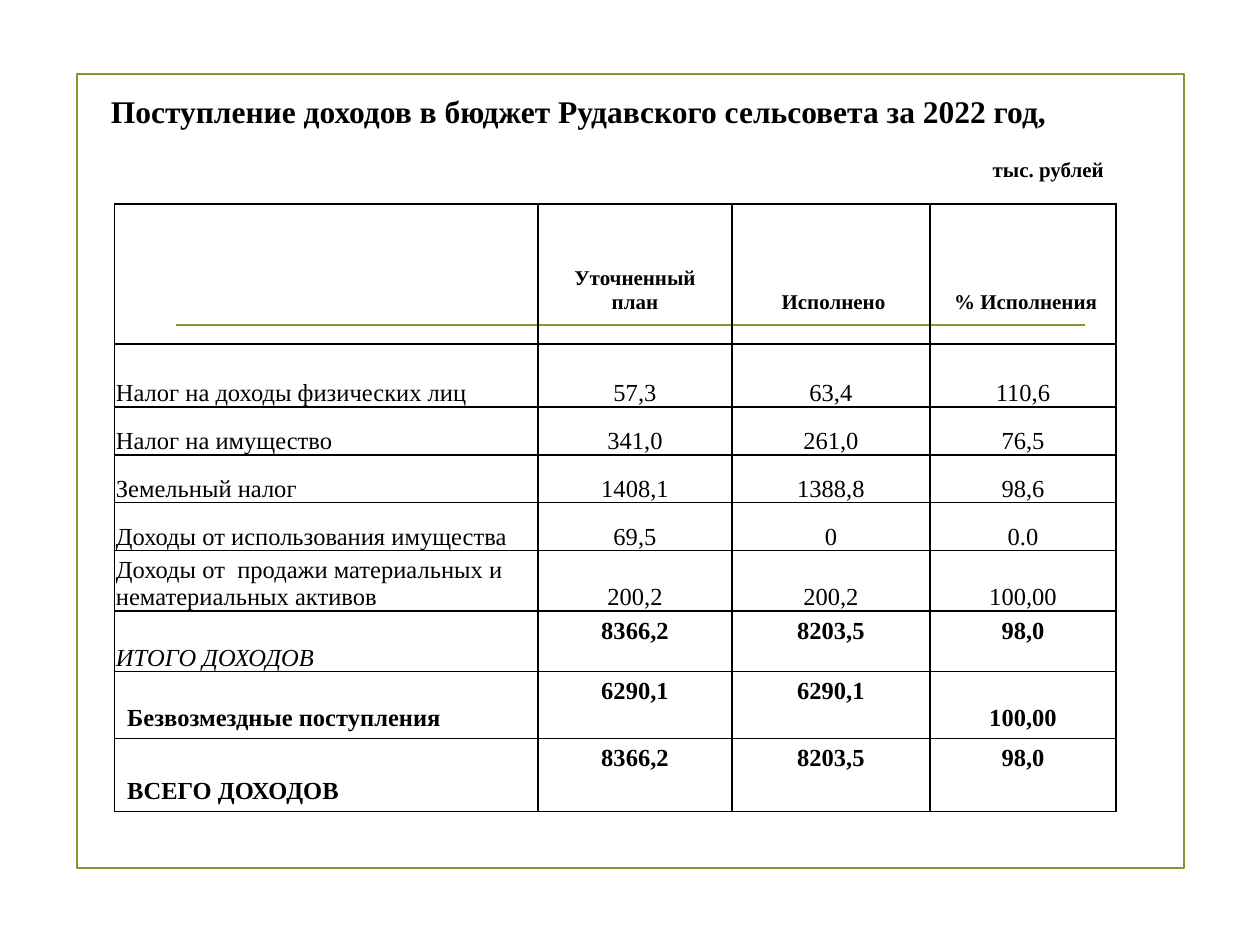
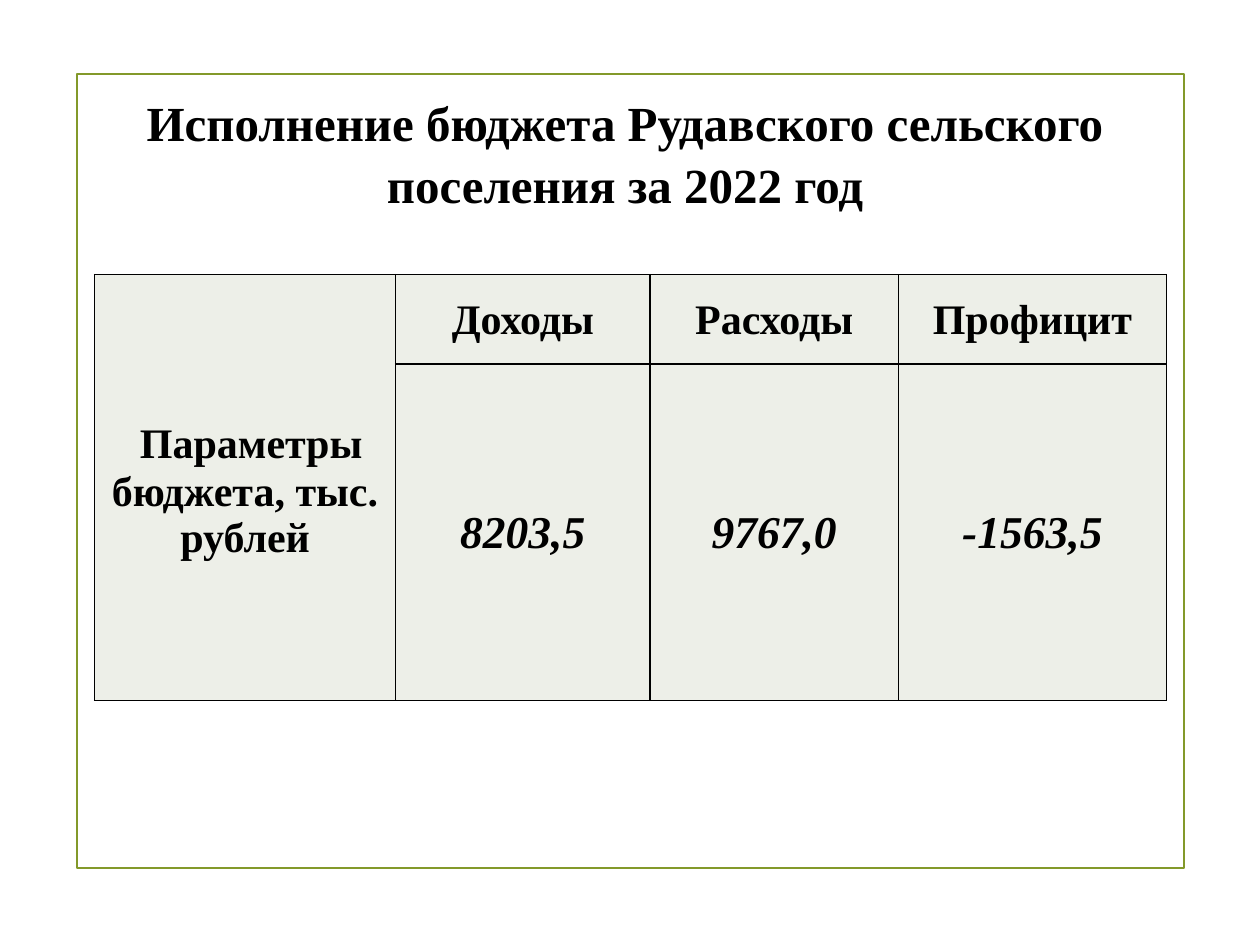
from lxml import etree
from pptx import Presentation
from pptx.dml.color import RGBColor
from pptx.enum.shapes import MSO_CONNECTOR, MSO_SHAPE
from pptx.enum.text import MSO_ANCHOR, PP_ALIGN
from pptx.oxml import parse_xml
from pptx.oxml.ns import nsdecls, qn
from pptx.util import Inches, Pt

COLORS = {"frame": "83992A", "text": "000000", "border": "000000", "cell": "EDEFE8"}
FONT = "Times New Roman"
LEFT, CENTER, RIGHT = PP_ALIGN.LEFT, PP_ALIGN.CENTER, PP_ALIGN.RIGHT
TOP, MIDDLE, BOTTOM = MSO_ANCHOR.TOP, MSO_ANCHOR.MIDDLE, MSO_ANCHOR.BOTTOM
TIGHT = (0.01, 0.01, 0.01, 0)
ROOMY = (0.1, 0.05, 0.1, 0.05)


def write(tf, text, align, size, **fmt):
    tf.word_wrap = True
    p = tf.paragraphs[0]
    p.alignment = align
    r = p.add_run()
    r.text = text
    for name, value in {"name": FONT, "size": Pt(size), "bold": False, **fmt}.items():
        setattr(r.font, name, value)
    r.font.color.rgb = RGBColor.from_string(COLORS["text"])


def format_cell(cell, anchor, margins, fill=None):
    """Set anchor, margins (left, top, right, bottom), black borders and fill."""
    cell.vertical_anchor = anchor
    for side, margin in zip(("left", "top", "right", "bottom"), margins):
        setattr(cell, f"margin_{side}", Inches(margin))
    tcPr = cell._tc.get_or_add_tcPr()
    for edge in "LRTB":
        tcPr.append(parse_xml(
            f'<a:ln{edge} w="12700" {nsdecls("a")}><a:solidFill>'
            f'<a:srgbClr val="{COLORS["border"]}"/></a:solidFill></a:ln{edge}>'))
    if fill:
        cell.fill.solid()
        cell.fill.fore_color.rgb = RGBColor.from_string(fill)
    else:
        cell.fill.background()


prs = Presentation()
prs.slide_width, prs.slide_height = Inches(10), Inches(7.5)
layout = prs.slide_layouts[5]
income, result = [prs.slides.add_slide(layout) for _ in range(2)]

# Frame and rule shared through the layout
frame = income.shapes.add_shape(
    MSO_SHAPE.RECTANGLE, Inches(0.61), Inches(0.59), Inches(8.79), Inches(6.3))
frame.shadow.inherit = False
frame.fill.background()
rule = income.shapes.add_connector(
    MSO_CONNECTOR.STRAIGHT, Inches(1.4), Inches(2.58), Inches(8.61), Inches(2.58))
etree.SubElement(rule._element.spPr, qn("a:effectLst"))
for i, sp in enumerate((frame, rule)):
    sp.line.color.rgb = RGBColor.from_string(COLORS["frame"])
    sp.line.width = Pt(1.25)
    sp._element.xpath(".//p:cNvPr")[0].set("id", str(20 + i))
    layout.shapes.element.insert(2 + i, sp._element)

# Titles
titles = [
    (income, "Поступление доходов в бюджет Рудавского сельсовета за 2022 год,",
     (0.78, 0.68, 8.08, 0.45), LEFT, TOP, 18, 1.0),
    (result, "Исполнение бюджета Рудавского сельского поселения за 2022 год",
     (0.59, 0.6, 8.74, 1.2), CENTER, MIDDLE, 28, 1.05),
]
for s, text, box, align, anchor, size, spacing in titles:
    title = s.shapes.title
    title.left, title.top, title.width, title.height = map(Inches, box)
    title.text_frame.vertical_anchor = anchor
    write(title.text_frame, text, align, size, bold=True)
    title.text_frame.paragraphs[0].line_spacing = spacing

# Slide 1: income table
unit = income.shapes.add_textbox(Inches(6.86), Inches(1.19), Inches(2), Inches(0.3))
write(unit.text_frame, "тыс. рублей", RIGHT, 12, bold=True)

header = ["", "Уточненный план", " Исполнено", " % Исполнения"]
items = [
    ["Налог на доходы физических лиц", "57,3", "63,4", "110,6"],
    ["Налог на имущество", "341,0", "261,0", "76,5"],
    ["Земельный налог", "1408,1", "1388,8", "98,6"],
    ["Доходы от использования имущества", "69,5", "0", "0.0"],
    ["Доходы от  продажи материальных и нематериальных активов",
     "200,2", "200,2", "100,00"],
]
totals = [
    ["ИТОГО ДОХОДОВ", "8366,2", "8203,5", "98,0"],
    ["Безвозмездные поступления", "6290,1", "6290,1", "100,00"],
    ["ВСЕГО ДОХОДОВ", "8366,2", "8203,5", "98,0"],
]
rows = [header] + items + totals
col_widths = [3.36, 1.54, 1.57, 1.48]
row_heights = [1.11, 0.5, 0.38, 0.38, 0.38, 0.48, 0.48, 0.53, 0.58]
tbl = income.shapes.add_table(
    len(rows), 4, Inches(0.91), Inches(1.62), Inches(7.95), Inches(4.82)).table
tbl.first_row = tbl.horz_banding = False
for col, width in zip(tbl.columns, col_widths):
    col.width = Inches(width)
for i, (row, height) in enumerate(zip(rows, row_heights)):
    tbl.rows[i].height = Inches(height)
    for j, text in enumerate(row):
        cell = tbl.cell(i, j)
        subtotal = text == "ИТОГО ДОХОДОВ"
        anchor, margins = BOTTOM, ROOMY
        if row is header:
            margins = (0.1, 0.05, 0.1, 0.24)
        elif row in items or subtotal:
            margins = TIGHT
        elif j and text != "100,00":
            anchor = TOP
        format_cell(cell, anchor, margins)
        if text:
            write(cell.text_frame, text, CENTER if j else LEFT,
                  12 if row is header else 14,
                  bold=row not in items and not subtotal, italic=subtotal)

# Slide 2: budget result table
budget = [("Доходы", "8203,5"), ("Расходы", "9767,0"), ("Профицит", "-1563,5")]
tbl = result.shapes.add_table(
    2, 4, Inches(0.75), Inches(2.18), Inches(8.5), Inches(3.38)).table
tbl.first_row = tbl.horz_banding = False
for col, width in zip(tbl.columns, [2.39, 2.02, 1.97, 2.13]):
    col.width = Inches(width)
for row, height in zip(tbl.rows, [0.71, 2.67]):
    row.height = Inches(height)
    for cell in row.cells:
        format_cell(cell, MIDDLE, TIGHT, COLORS["cell"])
label = tbl.cell(0, 0)
label.merge(tbl.cell(1, 0))
write(label.text_frame, " ", CENTER, 28, bold=True)
write(label.text_frame, "Параметры бюджета, тыс. рублей", CENTER, 24, bold=True)
for j, (name, amount) in enumerate(budget, 1):
    write(tbl.cell(0, j).text_frame, name, CENTER, 24, bold=True)
    write(tbl.cell(1, j).text_frame, amount, CENTER, 26, bold=True, italic=True)

prs.save("out.pptx")
